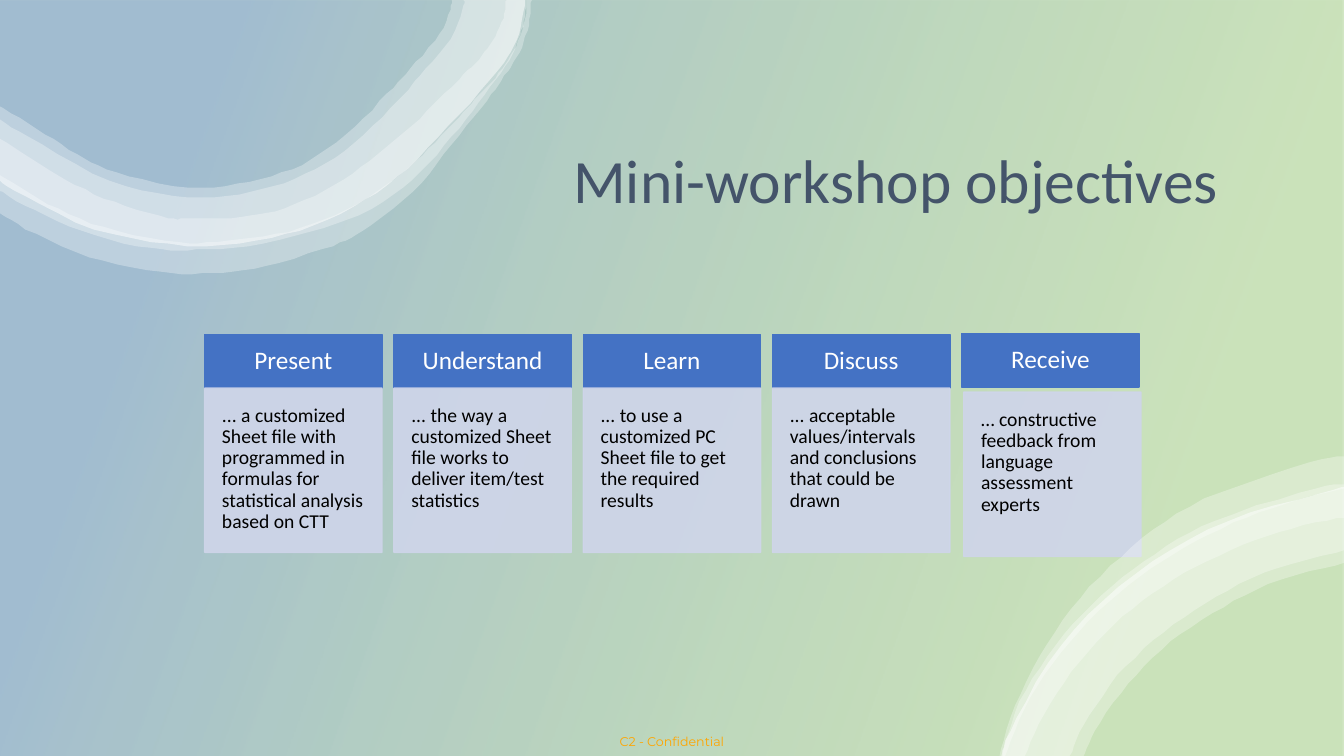
from lxml import etree
from pptx import Presentation
from pptx.dml import color
from pptx.enum import shapes, text
from pptx.oxml import ns
from pptx.util import Pt

CARDS = [
    ("Present", "... a customized Sheet file with programmed in formulas for "
                "statistical analysis based on CTT"),
    ("Understand", "... the way a customized Sheet file works to deliver item/test statistics"),
    ("Learn", "... to use a customized PC Sheet file to get the required results"),
    ("Discuss", "... acceptable values/intervals and conclusions that could be drawn"),
    ("Receive", "… constructive feedback from language assessment experts"),
]

WAVE = [(-1.5, 128), (10, 135.5), (67, 163.5), (134.5, 175.5), (193.5, 170), (243, 153),
        (284.5, 126), (320.5, 90.5), (356, 50), (369, 29), (375, 4.5), (375, -0.5)]
WAVES = [
    ([(376.5, -0.5), (374.5, 18), (367, 36), (356.5, 52.5), (342, 68.5), (327.5, 83.5),
      (306, 106.5), (282, 127.5), (247, 150.5), (206, 165.5), (162, 172), (127.5, 173),
      (74, 162.5), (34.5, 145.5), (-1.5, 124)],
     [(-1.5, 151), (18.5, 163.5), (63.5, 183.5), (114, 194.5), (152, 195), (190, 190),
      (237.5, 175.5), (259, 165), (295, 137), (322.5, 103.5), (348, 71.5), (360.5, 54.5),
      (371, 37.5), (377.5, 18.5), (379.5, -0.5)]),
    ([(361.5, -0.5), (359.5, 13), (352, 29), (341.5, 43), (327.5, 57), (299.5, 85),
      (270.5, 110), (239, 132.5), (203, 149), (172, 155), (135.5, 156), (120, 155.5),
      (81.5, 144.5), (45.5, 127.5), (-1.5, 98)],
     [(-1.5, 135.5), (25, 150.5), (68.5, 168.5), (116, 178.5), (140.5, 178.5), (188.5, 174),
      (256.5, 153.5), (294, 129), (322.5, 98), (346.5, 67.5), (363.5, 43), (371.5, 24.5),
      (374.5, 15), (376, -0.5)]),
    ([(331, -0.5), (331, 4.5), (322, 27.5), (300, 53.5), (284.5, 71.5), (252.5, 103),
      (217.5, 124.5), (179, 137), (134.5, 141), (78, 129), (21, 98), (-1.5, 84)], WAVE),
    ([(322.5, -0.5), (322.5, 3.5), (314, 24.5), (293, 49), (276.5, 67), (246.5, 97),
      (215.5, 117.5), (178, 129.5), (134.5, 134), (83, 123), (55, 110), (26.5, 92),
      (-1.5, 75)], WAVE),
]

ARC = [(715.5, 540), (721.5, 522.5), (757.5, 461), (811, 410), (877.5, 372), (952, 350),
       (960.5, 348.5)]
ARCS = [
    ([(713.5, 540), (725, 504), (748, 459.5), (778.5, 419), (816.5, 384.5), (860.5, 356.5),
      (935.5, 330.5), (960.5, 326)],
     [(960.5, 349), (917.5, 359.5), (872, 377.5), (829.5, 401), (791.5, 430.5), (758, 466),
      (731.5, 506), (718, 540)]),
    (ARC, [(960.5, 402.5), (915, 414), (873.5, 433.5), (836.5, 458.5), (806, 488),
           (782.5, 521.5), (774, 540)]),
    ([(715, 540), (728.5, 501), (754, 461), (787, 425), (825, 395.5), (868.5, 371.5),
      (939.5, 349), (960.5, 345.5)],
     [(960.5, 369.5), (922.5, 377.5), (879, 393), (838.5, 414), (802, 440.5), (771, 473),
      (746, 510), (732, 540)]),
    (ARC, [(960.5, 393), (911.5, 406), (869, 426), (831, 451.5), (798.5, 482.5),
           (774.5, 517.5), (764.5, 540)]),
]


def rgb(code):
    return color.RGBColor.from_string(code)


def fade(shape, *shares):
    tints = list(shape.element.spPr.iter(ns.qn("a:srgbClr")))
    for tint, share in zip(tints, shares):
        etree.SubElement(tint, ns.qn("a:alpha")).set("val", str(share * 1000))


def curve(knots, steps=5):
    dots = []
    ends = [knots[0], *knots, knots[-1]]
    for a, b, c, d in zip(ends, ends[1:], ends[2:], ends[3:]):
        for step in range(steps):
            t = step / steps
            dots.append(tuple(
                q + t / 2 * (r - p + t * (2*p - 5*q + 4*r - s + t * (3*q - p - 3*r + s)))
                for p, q, r, s in zip(a, b, c, d)))
    return dots + [knots[-1]]


def band(slide, near, far):
    dots = curve(near) + curve(far)
    form = slide.shapes.build_freeform(*dots[0], scale=Pt(1))
    form.add_line_segments(dots[1:], close=True)
    shape = form.convert_to_shape()
    shape.shadow.inherit = False
    shape.fill.solid()
    shape.fill.fore_color.rgb = rgb("FFFFFF")
    shape.line.fill.background()
    fade(shape, 30)


def write(shape, words, size, tint, font="Calibri", inset=7.2, mid=True, space=0.9):
    frame = shape.text_frame
    frame.word_wrap = True
    frame.margin_left = frame.margin_right = Pt(inset)
    frame.margin_top = frame.margin_bottom = Pt(inset)
    frame.vertical_anchor = text.MSO_ANCHOR.MIDDLE if mid else text.MSO_ANCHOR.TOP
    para = frame.paragraphs[0]
    para.text = words
    para.alignment = text.PP_ALIGN.CENTER if mid else text.PP_ALIGN.LEFT
    para.line_spacing = space
    para.font.name = font
    para.font.size = Pt(size)
    para.font.color.rgb = rgb(tint)


def label(slide, box, *args, **style):
    write(slide.shapes.add_textbox(*map(Pt, box)), *args, **style)


def block(slide, box, tint):
    shape = slide.shapes.add_shape(shapes.MSO_SHAPE.RECTANGLE, *map(Pt, box))
    shape.shadow.inherit = False
    shape.fill.solid()
    shape.fill.fore_color.rgb = rgb(tint)
    shape.line.color.rgb = rgb(tint)
    shape.line.width = Pt(1)
    return shape


def card(slide, left, head, body, up=0, right=0, down=0):
    top = block(slide, (left, 239 - up, 126.7, 38.2), "4472C4")
    write(top, head, 18, "FFFFFF", inset=10)
    base = block(slide, (left + right, 277.2 + down, 126.7, 117.4), "CFD5EA")
    fade(base, 90, 90)
    write(base, body, 14, "000000", inset=12.4, mid=False)


def wash(slide):
    slide.background.fill.solid()
    slide.background.fill.fore_color.rgb = rgb("E2F0D9")
    shape = slide.shapes.add_shape(shapes.MSO_SHAPE.RECTANGLE, 0, 0, Pt(960), Pt(540))
    shape.shadow.inherit = False
    shape.line.fill.background()
    shape.fill.gradient()
    shape.fill.gradient_angle = 160
    stops = zip(shape.fill.gradient_stops, ((0.16, "70AD47"), (0.85, "4472C4")))
    for stop, (place, tint) in stops:
        stop.position = place
        stop.color.rgb = rgb(tint)
    fade(shape, 20, 40)


def main():
    deck = Presentation()
    deck.slide_width, deck.slide_height = Pt(960), Pt(540)
    slide = deck.slides.add_slide(deck.slide_layouts[6])
    wash(slide)
    label(slide, (428.4, 519.1, 103, 20.9), "C2 - Confidential", 9, "FFA500",
          font="Montserrat", inset=0, space=1)
    for near, far in WAVES:
        band(slide, near, far)
    label(slide, (318.2, 59, 643.7, 144.7), "Mini-workshop objectives", 44, "44546A")
    for i, (head, body) in enumerate(CARDS):
        shift = {"up": 0.7, "right": 1.4, "down": 2.9} if head == "Receive" else {}
        card(slide, 146.2 + 135.2 * i, head, body, **shift)
    for near, far in ARCS:
        band(slide, near, far)
    deck.save("out.pptx")


if __name__ == "__main__":
    main()
